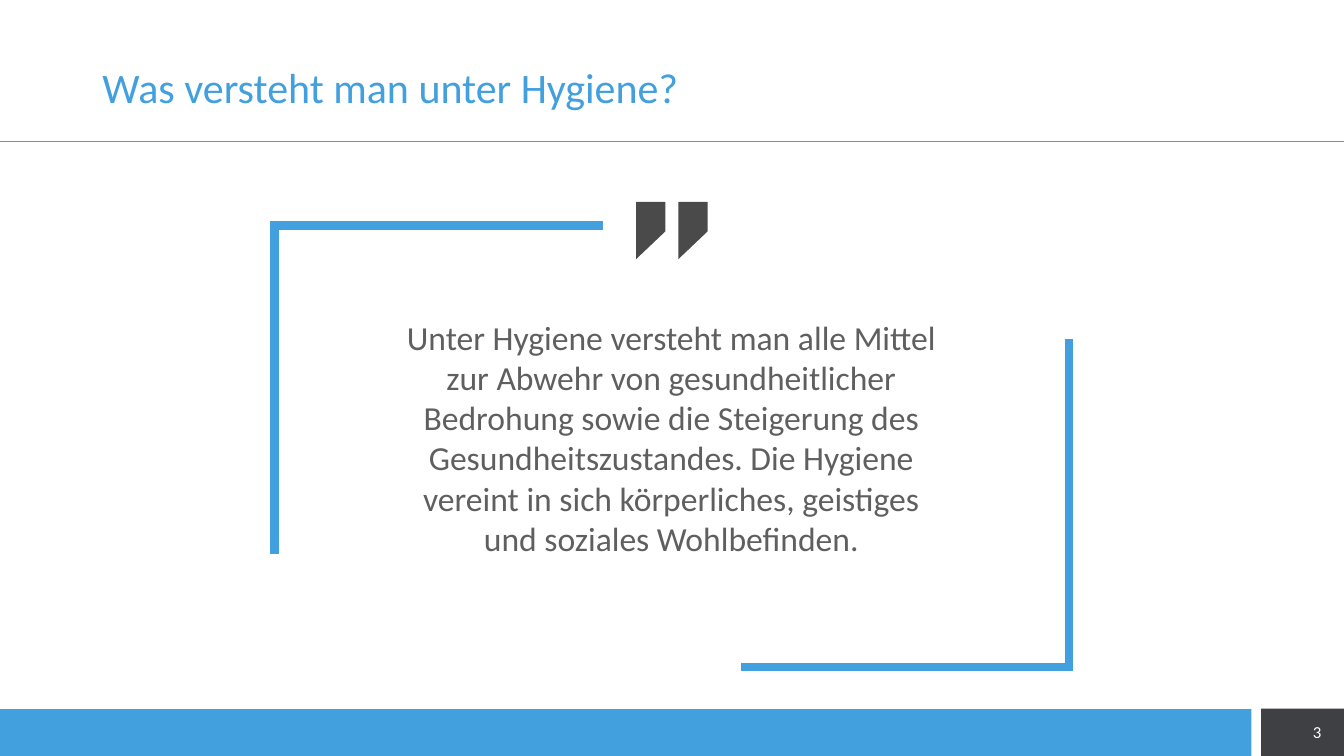
from lxml import etree
from pptx import Presentation
from pptx import util as u
from pptx.dml.color import RGBColor
from pptx.enum import shapes, text
from pptx.oxml.ns import qn

BLUE, DARK, GREY = "42A0DE", "3F4044", "5F5F5F"
QUOTE = (
    "Unter Hygiene versteht man alle Mittel zur Abwehr von gesundheitlicher "
    "Bedrohung sowie die Steigerung des Gesundheitszustandes. Die Hygiene "
    "vereint in sich körperliches, geistiges und soziales Wohlbefinden."
)


def paint(fmt, color):
    """Give a fill or a font colour format a solid hex colour."""
    if hasattr(fmt, "solid"):
        fmt.solid()
        fmt = fmt.fore_color
    fmt.rgb = RGBColor.from_string(color)


def write(sp, content, size, color, align=None, anchor=None, spacing=None, inset=7.2):
    """Put one formatted paragraph of text in a shape."""
    tf = sp.text_frame
    tf.word_wrap = True
    tf.auto_size = text.MSO_AUTO_SIZE.NONE
    tf.margin_left = tf.margin_right = u.Pt(inset)
    tf.margin_top = tf.margin_bottom = u.Pt(3.6)
    tf.vertical_anchor = anchor
    p = tf.paragraphs[0]
    p.alignment = align
    p.line_spacing = spacing
    r = p.add_run()
    r.text = content
    r.font.name = "Calibri"
    r.font.size = u.Pt(size)
    paint(r.font.color, color)


def add_text(s, box, content, size, color, **fmt):
    """Add a text box at a left, top, width, height box."""
    sp = s.shapes.add_textbox(*map(u.Pt, box))
    write(sp, content, size, color, **fmt)


def add_bar(s, box, color):
    """Add a plain filled rectangle."""
    sp = s.shapes.add_shape(shapes.MSO_SHAPE.RECTANGLE, *map(u.Pt, box))
    sp.shadow.inherit = False
    paint(sp.fill, color)
    sp.line.fill.background()


def add_rule(s, y, width, color):
    """Add a thin horizontal line from the left edge."""
    cx = s.shapes.add_connector(
        shapes.MSO_CONNECTOR.STRAIGHT, 0, u.Pt(y), u.Pt(width), u.Pt(y)
    )
    paint(cx.line.fill, color)
    cx.line.width = u.Pt(0.5)
    etree.SubElement(cx._element.spPr, qn("a:effectLst"))


def add_outline(s, points, close):
    """Add a freeform through points, without a shadow."""
    pts = [(u.Pt(x), u.Pt(y)) for x, y in points]
    fb = s.shapes.build_freeform(*pts[0])
    fb.add_line_segments(pts[1:], close=close)
    sp = fb.convert_to_shape()
    sp.shadow.inherit = False
    return sp


def add_bracket(s, x, y, arm):
    """Add a corner at x, y whose two arms run by a signed length."""
    sp = add_outline(s, [(x, y + arm), (x, y), (x + arm, y)], False)
    sp.fill.background()
    paint(sp.line.fill, BLUE)
    sp.line.width = u.Pt(6)
    ln = sp.line._get_or_add_ln()
    ln.set("cap", "sq")
    etree.SubElement(ln, qn("a:miter"), lim="800000")


def add_quote_mark(s, x, y, w):
    """Add one slanted quotation mark."""
    points = [(x, y), (x + w, y), (x + w, y + w), (x, y + 1.95 * w)]
    sp = add_outline(s, points, True)
    paint(sp.fill, "4A4A4B")
    sp.line.fill.background()


def add_title(s, box, content):
    """Move and fill the title placeholder."""
    sp = s.shapes.title
    sp.left, sp.top, sp.width, sp.height = map(u.Pt, box)
    write(sp, content, 30, BLUE, align=text.PP_ALIGN.LEFT,
          anchor=text.MSO_ANCHOR.MIDDLE, spacing=0.9)


def main():
    """Build the slide and save it."""
    prs = Presentation()
    prs.slide_width, prs.slide_height = u.Pt(960), u.Pt(540)
    s = prs.slides.add_slide(prs.slide_layouts[5])
    add_bar(s, (900.8, 506.2, 59.2, 33.8), DARK)
    add_bar(s, (0, 506.6, 893.8, 33.4), BLUE)
    add_rule(s, 100.8, 960, "8A8A8A")
    add_bracket(s, 196.2, 161.2, 231.5)
    add_bracket(s, 763.6, 476.6, -231.5)
    add_text(s, (282.2, 222.5, 394.6, 211), QUOTE, 24, GREY,
             align=text.PP_ALIGN.CENTER)
    for x in (454.3, 484.5):
        add_quote_mark(s, x, 144.2, 21)
    add_title(s, (66, 28.8, 828, 70.6), "Was versteht man unter Hygiene?")
    add_text(s, (910, 508.4, 41, 28.8), "3", 12, "FFFFFF",
             align=text.PP_ALIGN.RIGHT, anchor=text.MSO_ANCHOR.MIDDLE)
    prs.save("out.pptx")


if __name__ == "__main__":
    main()
